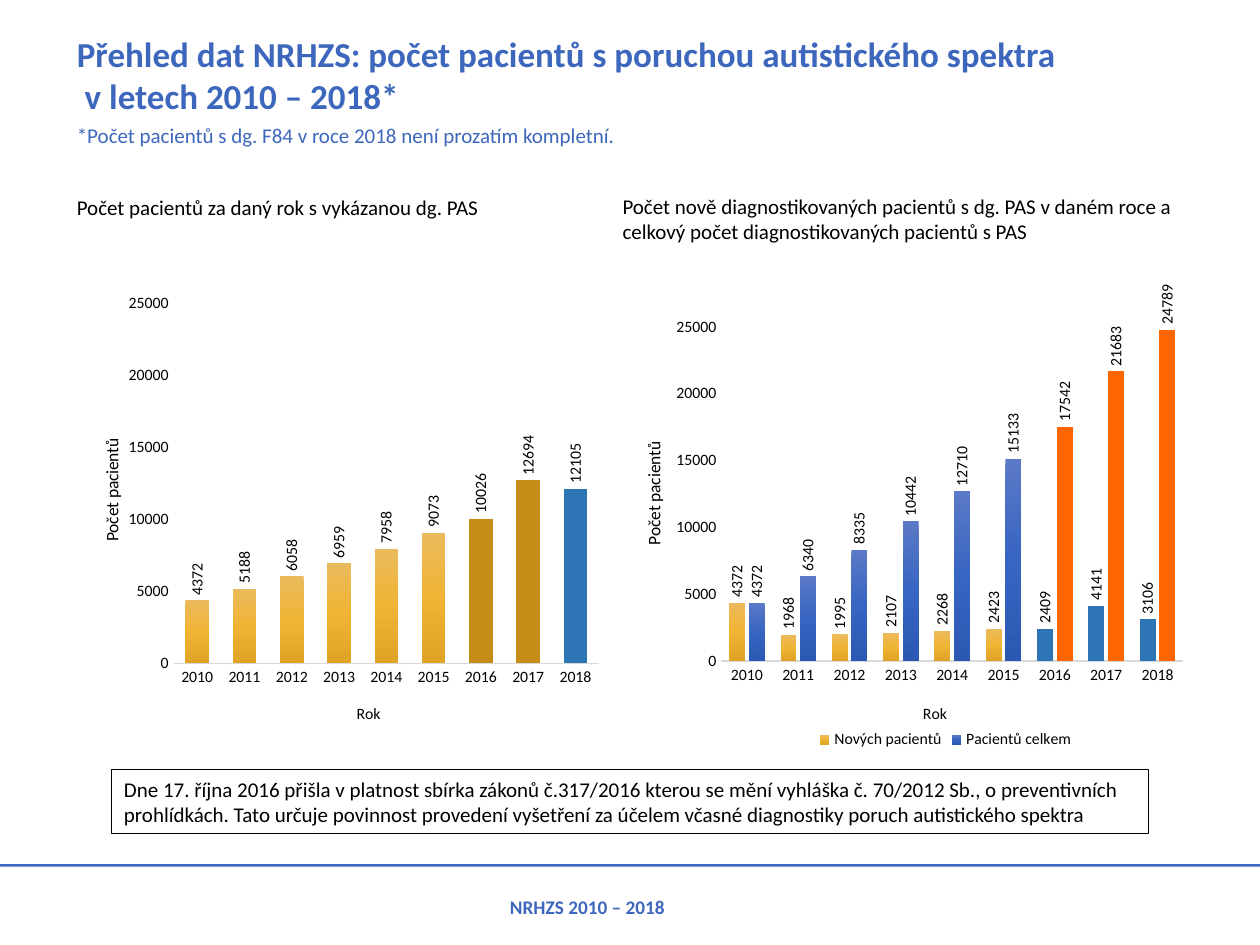
from dataclasses import dataclass

import lxml.etree
import pptx
import pptx.chart.data
import pptx.dml.color
import pptx.enum.chart
import pptx.enum.shapes
import pptx.oxml.ns
import pptx.util

Cm, Pt = pptx.util.Cm, pptx.util.Pt
qn = pptx.oxml.ns.qn


@dataclass(frozen=True)
class Theme:
    font: str = "Calibri"
    blue: str = "3D67BC"
    black: str = "000000"
    axis: str = "D9D9D9"
    gold: tuple = ("EBBA5D", "F0B434", "DFA425")
    navy: tuple = ("5B79C6", "3765C2", "2B58B2")
    ochre: str = "C38D18"
    sky: str = "2E75B6"
    orange: str = "FF6600"
    head: float = 20
    body: float = 12
    foot: float = 11
    title: float = 10
    label: float = 9


THEME = Theme()
YEARS = [str(year) for year in range(2010, 2019)]


def rgb(code):
    return pptx.dml.color.RGBColor.from_string(code)


def style(font, size, color=THEME.black, bold=False):
    font.name, font.size, font.bold = THEME.font, Pt(size), bold
    font.color.rgb = rgb(color)


def text(slide, words, box, size=THEME.body, color=THEME.black,
         bold=False, wrap=True, edge=None):
    shape = slide.shapes.add_textbox(*map(Cm, box))
    frame = shape.text_frame
    frame.word_wrap = wrap
    frame.text = words
    for run in frame.paragraphs[0].runs:
        style(run.font, size, color, bold)
    if edge:
        shape.line.color.rgb = rgb(edge)
        shape.line.width = Pt(0.75)


def rule(slide, box, color):
    shape = slide.shapes.add_shape(
        pptx.enum.shapes.MSO_SHAPE.RECTANGLE, *map(Cm, box))
    shape.shadow.inherit = False
    shape.fill.solid()
    shape.fill.fore_color.rgb = rgb(color)
    shape.line.fill.background()


def place(node, index, inner=False, **spots):
    """Fix a chart part at fractions of the chart's width and height."""
    layout = node.find(qn("c:layout"))
    if layout is None:
        layout = lxml.etree.Element(qn("c:layout"))
        node.insert(index, layout)
    manual = lxml.etree.SubElement(layout, qn("c:manualLayout"))

    def put(tag, value):
        lxml.etree.SubElement(manual, qn("c:" + tag)).set("val", str(value))

    if inner:
        put("layoutTarget", "inner")
    put("xMode", "edge")
    put("yMode", "edge")
    for tag, value in spots.items():
        put(tag, value)


def turn(node):
    """Make text read upwards."""
    body = next(node.iter(qn("a:bodyPr")))
    body.set("rot", "-5400000")
    body.set("vert", "horz")


def shade(fill, colors):
    """Fill with evenly spaced colours from top to bottom."""
    fill.gradient()
    grad = next(fill._xPr.iter(qn("a:gradFill")))
    stops = grad.find(qn("a:gsLst"))
    for stop in list(stops):
        stops.remove(stop)
    for i, color in enumerate(colors):
        stop = lxml.etree.SubElement(stops, qn("a:gs"))
        stop.set("pos", str(100000 * i // (len(colors) - 1)))
        lxml.etree.SubElement(stop, qn("a:srgbClr")).set("val", color)
    grad.find(qn("a:lin")).set("ang", "5400000")


def name(axis, words, size, x, y):
    frame = axis.axis_title.text_frame
    frame.text = words
    style(frame.paragraphs[0].runs[0].font, size)
    place(axis.axis_title._element, 1, x=x, y=y)


def paint(series, colors, marks):
    """Shade the bars and give the marked years their own colour."""
    series.smooth = False if hasattr(series, "smooth") else None
    shade(series.format.fill, colors)
    for year, color in marks.items():
        fill = series.points[YEARS.index(year)].format.fill
        fill.solid()
        fill.fore_color.rgb = rgb(color)
    labels = series.data_labels
    labels.show_value = True
    labels.position = pptx.enum.chart.XL_LABEL_POSITION.OUTSIDE_END
    style(labels.font, THEME.label)
    turn(labels._element)


def bars(slide, box, rows, top, plot, low, side, key=None):
    """Draw columns; rows hold name, values, shades and marked years."""
    data = pptx.chart.data.CategoryChartData()
    data.categories = YEARS
    for label, values, _, _ in rows:
        data.add_series(label, values)
    chart = slide.shapes.add_chart(
        pptx.enum.chart.XL_CHART_TYPE.COLUMN_CLUSTERED,
        *map(Cm, box), data).chart
    chart.has_title = False
    style(chart.font, THEME.title)
    group = chart.plots[0]
    group.gap_width, group.overlap = 100, -24
    group.vary_by_categories = False
    for series, (_, _, colors, marks) in zip(group.series, rows):
        paint(series, colors, marks)

    years, count = chart.category_axis, chart.value_axis
    for axis in (years, count):
        axis.major_tick_mark = pptx.enum.chart.XL_TICK_MARK.NONE
        axis.has_major_gridlines = False
        style(axis.tick_labels.font, THEME.label)
    years.format.line.color.rgb = rgb(THEME.axis)
    years.format.line.width = Pt(1)
    count.format.line.fill.background()
    count.minimum_scale, count.maximum_scale = 0, top
    count.major_unit = 5000
    name(years, "Rok", THEME.label, *low)
    name(count, "Počet pacientů", THEME.title, *side)
    turn(count.axis_title._element)
    place(chart._chartSpace.chart.plotArea, 0, inner=True,
          **dict(zip("xywh", plot)))

    chart.has_legend = key is not None
    if key:
        legend = chart.legend
        legend.position = pptx.enum.chart.XL_LEGEND_POSITION.BOTTOM
        legend.include_in_layout = False
        style(legend.font, THEME.label)
        place(legend._element, 1, x=key[0], y=key[1])


def main():
    deck = pptx.Presentation()
    deck.slide_width, deck.slide_height = Cm(25.4), Cm(19.05)
    slide = deck.slides.add_slide(deck.slide_layouts[6])
    left, mid = 1.3, 12.3

    rule(slide, (0, 17.42, 25.4, 0.05), THEME.blue)
    text(slide, "NRHZS 2010 – 2018", (10.03, 17.93, 3.68, 0.74),
         size=THEME.foot, color=THEME.blue, bold=True, wrap=False)
    text(slide, "Přehled dat NRHZS: počet pacientů s poruchou autistického "
         "spektra\v v letech 2010 – 2018*", (left, 0.53, 22.8, 1.8),
         size=THEME.head, color=THEME.blue, bold=True)
    text(slide, "*Počet pacientů s dg. F84 v roce 2018 není prozatím "
         "kompletní.", (left, 2.34, 17.88, 0.76), color=THEME.blue)

    text(slide, "Počet pacientů za daný rok s vykázanou dg. PAS",
         (left, 3.8, 9.22, 0.76))
    seen = (4372, 5188, 6058, 6959, 7958, 9073, 10026, 12694, 12105)
    marks = {"2016": THEME.ochre, "2017": THEME.ochre, "2018": THEME.sky}
    bars(slide, (left, 5.74, 11, 9.2),
         [("Počet pacientů", seen, THEME.gold, marks)], 25000,
         plot=(0.2, 0.04, 0.78, 0.79), low=(0.53, 0.91), side=(0.06, 0.33))

    text(slide, "Počet nově diagnostikovaných pacientů s dg. PAS v daném roce "
         "a celkový počet diagnostikovaných pacientů s PAS",
         (mid, 3.77, 11.79, 1.27))
    fresh = (4372, 1968, 1995, 2107, 2268, 2423, 2409, 4141, 3106)
    total = (4372, 6340, 8335, 10442, 12710, 15133, 17542, 21683, 24789)
    late = YEARS[-3:]
    bars(slide, (mid, 5.74, 11.79, 9.98),
         [("Nových pacientů", fresh, THEME.gold,
           dict.fromkeys(late, THEME.sky)),
          ("Pacientů celkem", total, THEME.navy,
           dict.fromkeys(late, THEME.orange))], 27000,
         plot=(0.19, 0.03, 0.79, 0.73), low=(0.53, 0.84), side=(0.05, 0.31),
         key=(0.35, 0.89))

    text(slide, "Dne 17. října 2016 přišla v platnost sbírka zákonů "
         "č.317/2016 kterou se mění vyhláška č. 70/2012 Sb., o preventivních "
         "prohlídkách. Tato určuje povinnost provedení vyšetření za účelem "
         "včasné diagnostiky poruch autistického spektra",
         (2.25, 15.52, 20.9, 1.28), edge=THEME.black)
    deck.save("out.pptx")


if __name__ == "__main__":
    main()
